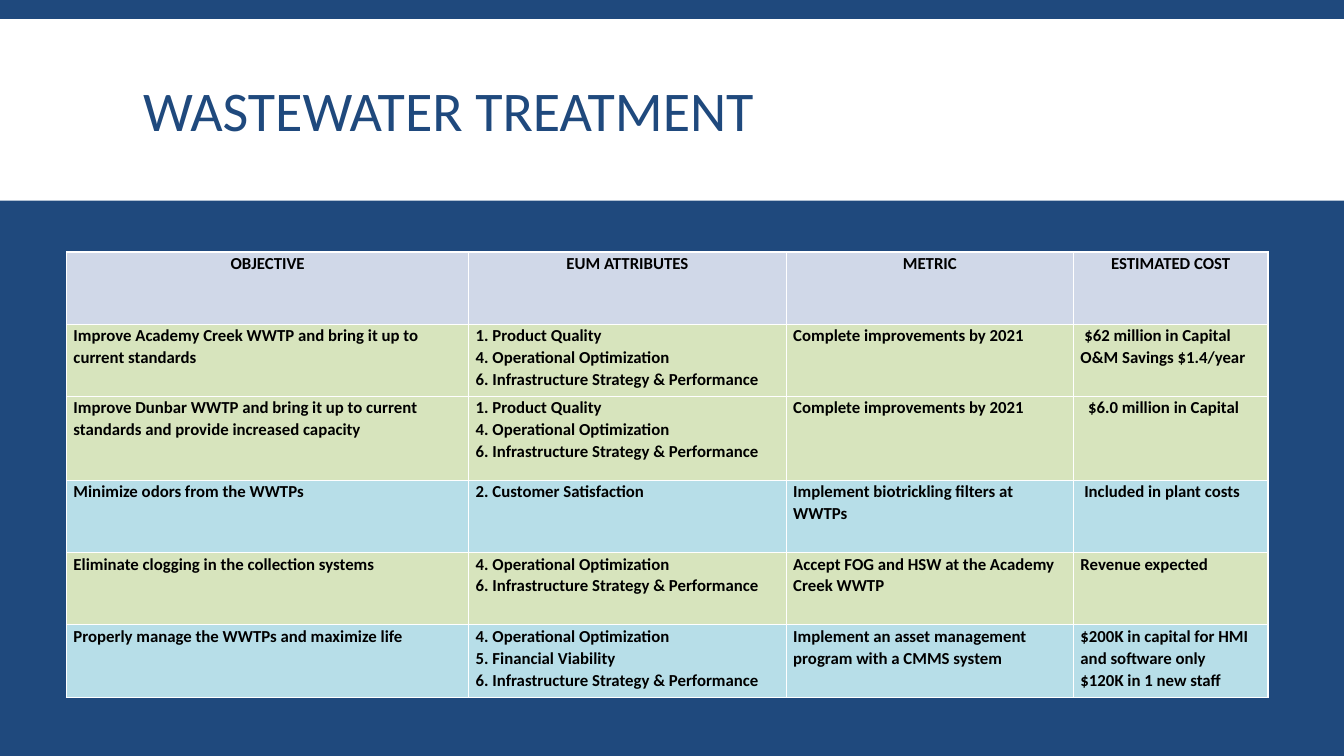
from dataclasses import dataclass

from lxml.etree import SubElement
from pptx import Presentation
from pptx.dml.color import RGBColor
from pptx.enum.shapes import MSO_SHAPE
from pptx.enum.text import MSO_ANCHOR, PP_ALIGN
from pptx.oxml.ns import qn
from pptx.util import Pt


@dataclass(frozen=True)
class Theme:
    font: str = "Calibri"
    title_size: int = 40
    table_size: int = 12
    navy: RGBColor = RGBColor(0x1F, 0x49, 0x7D)
    white: RGBColor = RGBColor(0xFF, 0xFF, 0xFF)
    black: RGBColor = RGBColor(0, 0, 0)
    header: RGBColor = RGBColor(0xD0, 0xD8, 0xE8)
    green: RGBColor = RGBColor(0xD7, 0xE4, 0xBD)
    blue: RGBColor = RGBColor(0xB7, 0xDE, 0xE8)


theme = Theme()


def format_paragraph(paragraph, size, color, bold, line_spacing, alignment):
    paragraph.line_spacing = line_spacing
    paragraph.alignment = alignment
    for run in paragraph.runs:
        run.font.name = theme.font
        run.font.size = Pt(size)
        run.font.bold = bold
        run.font.color.rgb = color


def add_borders(cell, color, width):
    properties = cell._tc.get_or_add_tcPr()
    for position, side in enumerate(("lnL", "lnR", "lnT", "lnB")):
        line = properties.makeelement(qn(f"a:{side}"), {"w": str(width)})
        fill = SubElement(line, qn("a:solidFill"))
        SubElement(fill, qn("a:srgbClr"), val=str(color))
        properties.insert(position, line)


# Slide and background
presentation = Presentation()
presentation.slide_width = Pt(960)
presentation.slide_height = Pt(540)
slide = presentation.slides.add_slide(presentation.slide_layouts[5])
slide.background.fill.solid()
slide.background.fill.fore_color.rgb = theme.navy

# Title on a white band
title = slide.shapes.title
title.left, title.top, title.width, title.height = Pt(95), Pt(22.3), Pt(770.4), Pt(118.8)
title.text_frame.text = "WASTEWATER TREATMENT"
title.text_frame.vertical_anchor = MSO_ANCHOR.MIDDLE
format_paragraph(title.text_frame.paragraphs[0], theme.title_size, theme.navy,
                 False, 0.85, PP_ALIGN.LEFT)

band = slide.shapes.add_shape(MSO_SHAPE.RECTANGLE, 0, Pt(13.7), Pt(960), Pt(129.6))
band.shadow.inherit = False
band.fill.solid()
band.fill.fore_color.rgb = theme.white
band.line.fill.background()
title.element.addprevious(band.element)

# Table content: fill colour, then the four cells of each row
quality = "1. Product Quality"
customers = "2. Customer Satisfaction"
operations = "4. Operational Optimization"
finance = "5. Financial Viability"
infrastructure = "6. Infrastructure Strategy & Performance"
rows = [
    (theme.header, ["OBJECTIVE", "EUM ATTRIBUTES", "METRIC", "ESTIMATED COST"]),
    (theme.green, ["Improve Academy Creek WWTP and bring it up to current standards",
                   "\n".join([quality, operations, infrastructure]),
                   "Complete improvements by 2021",
                   "$62 million in Capital\nO&M Savings $1.4/year"]),
    (theme.green, ["Improve Dunbar WWTP and bring it up to current standards "
                   "and provide increased capacity",
                   "\n".join([quality, operations, infrastructure]),
                   "Complete improvements by 2021",
                   "$6.0 million in Capital"]),
    (theme.blue, ["Minimize odors from the WWTPs", customers,
                  "Implement biotrickling filters at WWTPs",
                  "Included in plant costs"]),
    (theme.green, ["Eliminate clogging in the collection systems",
                   "\n".join([operations, infrastructure]),
                   "Accept FOG and HSW at the Academy Creek WWTP",
                   "Revenue expected"]),
    (theme.blue, ["Properly manage the WWTPs and maximize life",
                  "\n".join([operations, finance, infrastructure]),
                  "Implement an asset management program with a CMMS system",
                  "$200K in capital for HMI and software only\n$120K in 1 new staff"]),
]
column_widths = [287.3, 226.8, 205.2, 139]
row_heights = [51.6, 51.6, 60, 51.6, 51.6, 51.6]
cost_indents = {1: 2.7, 2: 5.4, 3: 2.7}  # first-line indent of the cost, by row

# Table
table = slide.shapes.add_table(len(rows), len(column_widths), Pt(47.5), Pt(180),
                               Pt(sum(column_widths)), Pt(sum(row_heights))).table
for column, width in zip(table.columns, column_widths):
    column.width = Pt(width)

for row_index, (fill_color, texts) in enumerate(rows):
    table.rows[row_index].height = Pt(row_heights[row_index])
    alignment = PP_ALIGN.CENTER if row_index == 0 else PP_ALIGN.LEFT
    for column_index, text in enumerate(texts):
        cell = table.cell(row_index, column_index)
        cell.margin_left = cell.margin_right = Pt(5)
        cell.margin_top = cell.margin_bottom = 0
        cell.fill.solid()
        cell.fill.fore_color.rgb = fill_color
        add_borders(cell, theme.white, Pt(1))
        cell.text_frame.text = text
        for paragraph in cell.text_frame.paragraphs:
            format_paragraph(paragraph, theme.table_size, theme.black, True, 1.07, alignment)

# Indent the first line of some costs
for row_index, indent in cost_indents.items():
    paragraph = table.cell(row_index, 3).text_frame.paragraphs[0]
    paragraph._p.get_or_add_pPr().set("indent", str(Pt(indent)))

presentation.save("out.pptx")
